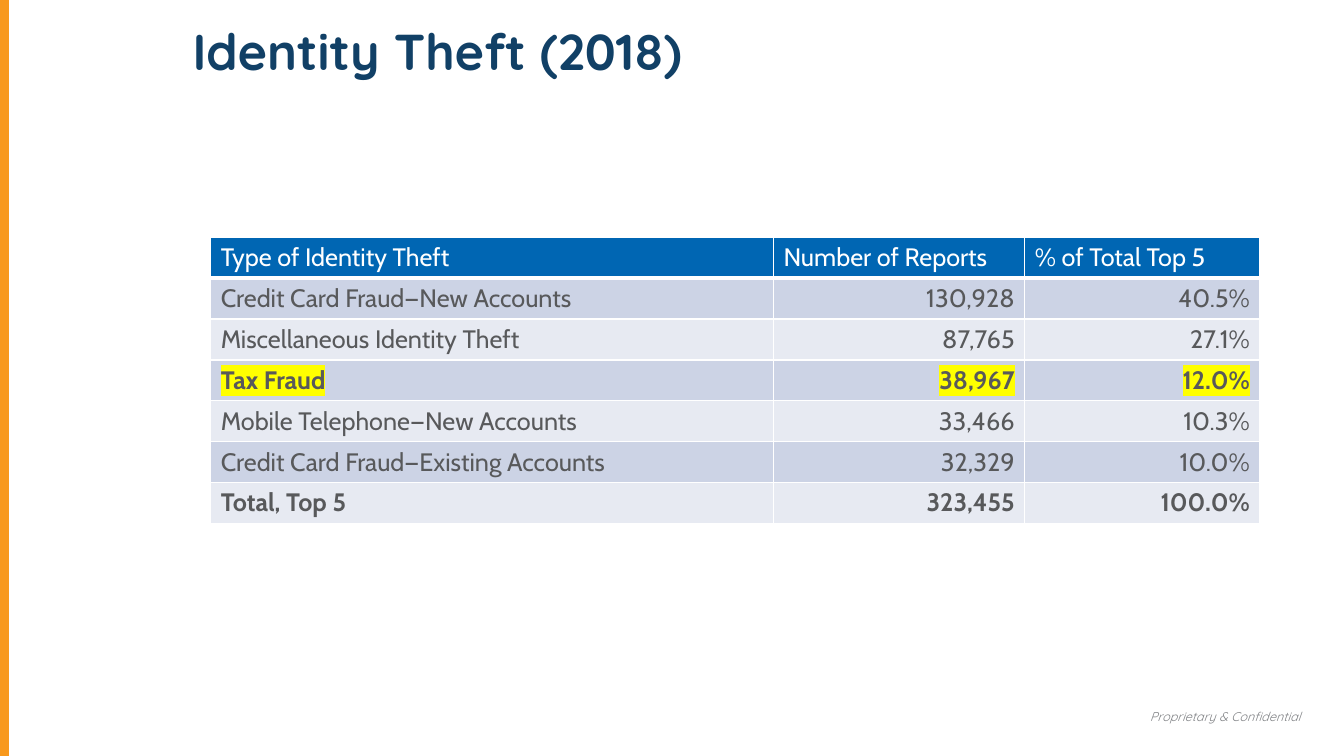
from lxml.etree import SubElement
from pptx import Presentation
from pptx.dml.color import RGBColor
from pptx.enum.shapes import MSO_CONNECTOR
from pptx.enum.text import MSO_ANCHOR, MSO_AUTO_SIZE, PP_ALIGN
from pptx.oxml import parse_xml
from pptx.oxml.ns import nsdecls, qn
from pptx.util import Pt


def color(hex_code):
    return RGBColor.from_string(hex_code)


def add_run(paragraph, text, font_name, size, hex_code, bold=False, italic=False):
    run = paragraph.add_run()
    run.text = text
    run.font.name = font_name
    run.font.size = Pt(size)
    run.font.bold = bold
    run.font.italic = italic
    run.font.color.rgb = color(hex_code)
    return run


presentation = Presentation()
presentation.slide_width = Pt(960)
presentation.slide_height = Pt(540)
slide = presentation.slides.add_slide(presentation.slide_layouts[5])

# Orange bar on the left edge
edge_bar = slide.shapes.add_connector(MSO_CONNECTOR.STRAIGHT, Pt(2.2), Pt(0), Pt(2.2), Pt(540))
edge_bar.line.color.rgb = color("F8991D")
edge_bar.line.width = Pt(8)
SubElement(edge_bar._element.spPr, qn("a:effectLst"))

# Title
title = slide.shapes.title
title.left, title.top, title.width, title.height = Pt(130.3), Pt(10.8), Pt(805.7), Pt(72)
title.text_frame.auto_size = MSO_AUTO_SIZE.NONE
title.text_frame.vertical_anchor = MSO_ANCHOR.TOP
heading = title.text_frame.paragraphs[0]
heading.alignment = PP_ALIGN.LEFT
add_run(heading, "Identity Theft (2018)", "Quicksand", 36, "114066", bold=True)

# Table of reports
reports = [
    ("Type of Identity Theft", "Number of Reports", "% of Total Top 5"),
    ("Credit Card Fraud—New Accounts", "130,928", "40.5%"),
    ("Miscellaneous Identity Theft", "87,765", "27.1%"),
    ("Tax Fraud", "38,967", "12.0%"),
    ("Mobile Telephone—New Accounts", "33,466", "10.3%"),
    ("Credit Card Fraud—Existing Accounts", "32,329", "10.0%"),
    ("Total, Top 5", "323,455", "100.0%"),
]
column_widths = [402, 179.5, 168]
row_height = 29.2
highlighted_row = 3
bold_rows = (highlighted_row, len(reports) - 1)

table = slide.shapes.add_table(
    len(reports), len(column_widths), Pt(150.5), Pt(169.5),
    Pt(sum(column_widths)), Pt(row_height * len(reports))).table
for column, width in zip(table.columns, column_widths):
    column.width = Pt(width)

for row_index, report in enumerate(reports):
    table.rows[row_index].height = Pt(row_height)
    is_header = row_index == 0
    row_fill = "0066B3" if is_header else ("E7EAF2", "CCD3E5")[row_index % 2]
    for column_index, text in enumerate(report):
        cell = table.cell(row_index, column_index)

        # White borders, thicker under the header
        for side in "LRTB":
            width = Pt(3 if is_header and side == "B" else 1)
            cell._tc.get_or_add_tcPr().append(parse_xml(
                f'<a:ln{side} {nsdecls("a")} w="{width}"><a:solidFill>'
                f'<a:srgbClr val="FFFFFF"/></a:solidFill></a:ln{side}>'))
        cell.fill.solid()
        cell.fill.fore_color.rgb = color(row_fill)

        entry = cell.text_frame.paragraphs[0]
        if not is_header and column_index > 0:
            entry.alignment = PP_ALIGN.RIGHT
        run = add_run(entry, text, "Cabin", 18, "FFFFFF" if is_header else "58595B",
                      bold=row_index in bold_rows)
        if row_index == highlighted_row:
            run._r.rPr.find(qn("a:solidFill")).addnext(parse_xml(
                f'<a:highlight {nsdecls("a")}><a:srgbClr val="FFFF00"/></a:highlight>'))

# Confidentiality footer
footer = slide.shapes.add_textbox(Pt(789.8), Pt(497.5), Pt(146.2), Pt(34.6)).text_frame
footer.word_wrap = True
footer.vertical_anchor = MSO_ANCHOR.BOTTOM
footer.margin_bottom = Pt(14.85)
notice = footer.paragraphs[0]
notice.alignment = PP_ALIGN.RIGHT
add_run(notice, "Proprietary & Confidential", "Quicksand", 9, "808285", italic=True)

presentation.save("out.pptx")
